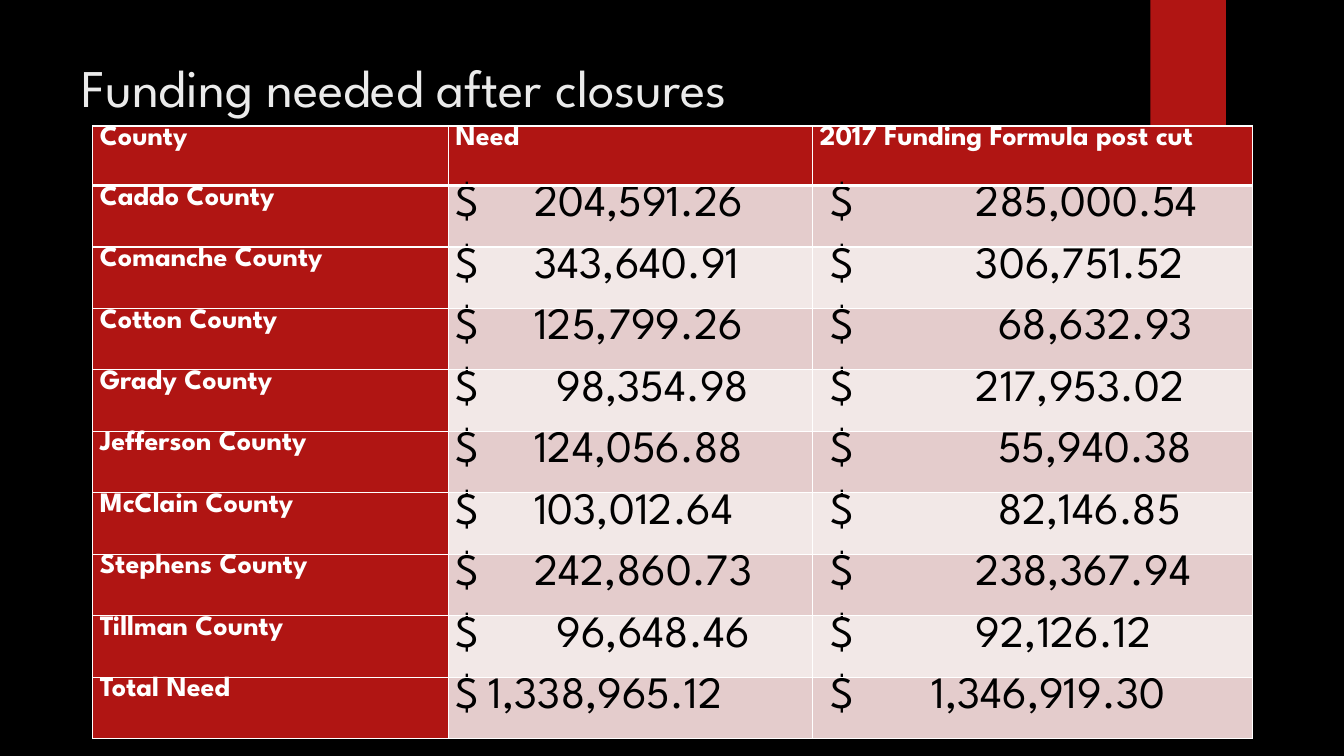
from lxml import etree
from pptx import Presentation
from pptx.dml.color import RGBColor
from pptx.enum.shapes import MSO_SHAPE
from pptx.enum.text import MSO_ANCHOR
from pptx.oxml.ns import qn
from pptx.util import Inches, Pt

RECT = MSO_SHAPE.RECTANGLE
TOP = MSO_ANCHOR.TOP
FONT = "League Spartan"
HEX = {
    "back": "000000", "red": "B01513", "title": "EBEBEB", "white": "FFFFFF",
    "ink": "000000", "dark": "E4CCCC", "light": "F2E8E7",
}
HEAD = ("County", "Need", "2017 Funding Formula post cut")
ROWS = (
    ("Caddo County", "204,591.26", 0.78, "285,000.54", 1.44),
    ("Comanche County", "343,640.91", 0.78, "306,751.52", 1.44),
    ("Cotton County", "125,799.26", 0.78, "68,632.93", 1.66),
    ("Grady County", "98,354.98", 1.0, "217,953.02", 1.44),
    ("Jefferson County", "124,056.88", 0.78, "55,940.38", 1.66),
    ("McClain County", "103,012.64", 0.78, "82,146.85", 1.66),
    ("Stephens County", "242,860.73", 0.78, "238,367.94", 1.44),
    ("Tillman County", "96,648.46", 1.0, "92,126.12", 1.44),
    ("Total Need", "1,338,965.12", 0.33, "1,346,919.30", 1.0),
)
COLS = (3.53, 3.61, 4.36)


def color(name):
    """Return the named colour."""
    return RGBColor.from_string(HEX[name])


def style(par, size, name, bold=False):
    """Set the font of a paragraph."""
    font = par.font
    font.name, font.size, font.bold = FONT, Pt(size), bold
    font.color.rgb = color(name)


def border(cell, base):
    """Draw white cell borders with the given bottom width."""
    props = cell._tc.get_or_add_tcPr()
    for side, width in (("L", 1), ("R", 1), ("T", 1), ("B", base)):
        line = etree.SubElement(props, qn("a:ln" + side), w=str(Pt(width)))
        fill = etree.SubElement(line, qn("a:solidFill"))
        etree.SubElement(fill, qn("a:srgbClr"), val=HEX["white"])


def tab(par, stop):
    """Add a left tab stop to a paragraph."""
    tabs = etree.SubElement(par._p.get_or_add_pPr(), qn("a:tabLst"))
    etree.SubElement(tabs, qn("a:tab"), pos=str(Inches(stop)), algn="l")


def fill_cell(cell, text, back, base=1, left=0.07):
    """Fill a cell and return its paragraph."""
    border(cell, base)
    cell.fill.solid()
    cell.fill.fore_color.rgb = color(back)
    cell.margin_left, cell.margin_right = Inches(left), Inches(0.07)
    cell.margin_top = cell.margin_bottom = 0
    par = cell.text_frame.paragraphs[0]
    par.text = text
    return par


def add_label(cell, text, base=1):
    """Write a bold white label on red."""
    style(fill_cell(cell, text, "red", base), 20, "white", True)


def add_sum(cell, text, stop, back, left):
    """Write a dollar sign and a tabbed amount."""
    par = fill_cell(cell, "$\t" + text, back, left=left)
    tab(par, stop)
    style(par, 32, "ink")


def add_band(slide, left, top, width, height):
    """Draw the red band at the top edge."""
    band = slide.shapes.add_shape(
        RECT, Inches(left), Inches(top), Inches(width), Inches(height))
    band.shadow.inherit = False
    band.fill.solid()
    band.fill.fore_color.rgb = color("red")
    band.line.fill.background()


def add_title(slide, left, top, width, height):
    """Write the slide title."""
    box = slide.shapes.add_textbox(
        Inches(left), Inches(top), Inches(width), Inches(height))
    frame = box.text_frame
    frame.word_wrap = True
    frame.vertical_anchor = TOP
    frame.margin_top = Inches(0.04)
    par = frame.paragraphs[0]
    par.text = "Funding needed after closures"
    style(par, 37.8, "title")


def add_funds(slide, left, top, width, height):
    """Build the table of need and funding by county."""
    table = slide.shapes.add_table(
        len(ROWS) + 1, len(COLS), Inches(left), Inches(top),
        Inches(width), Inches(height)).table
    table.horz_banding = False
    for col, size in zip(table.columns, COLS):
        col.width = Inches(size)
    for num, row in enumerate(table.rows):
        row.height = Inches(0.61 if num else 0.59)
    for num, text in enumerate(HEAD):
        add_label(table.cell(0, num), text, 3)
    for num, (county, need, gap, fund, space) in enumerate(ROWS, 1):
        back = "dark" if num % 2 else "light"
        add_label(table.cell(num, 0), county)
        add_sum(table.cell(num, 1), need, gap, back, 0.07)
        add_sum(table.cell(num, 2), fund, space, back, 0.18)


def main():
    """Build and save the slide."""
    deck = Presentation()
    deck.slide_width, deck.slide_height = Inches(13.33), Inches(7.5)
    slide = deck.slides.add_slide(deck.slide_layouts[6])
    slide.background.fill.solid()
    slide.background.fill.fore_color.rgb = color("back")
    add_band(slide, 11.41, 0, 0.75, 1.25)
    add_title(slide, 0.71, 0.5, 10.29, 1.12)
    add_funds(slide, 0.92, 1.25, 11.5, 6.07)
    deck.save("out.pptx")


if __name__ == "__main__":
    main()
